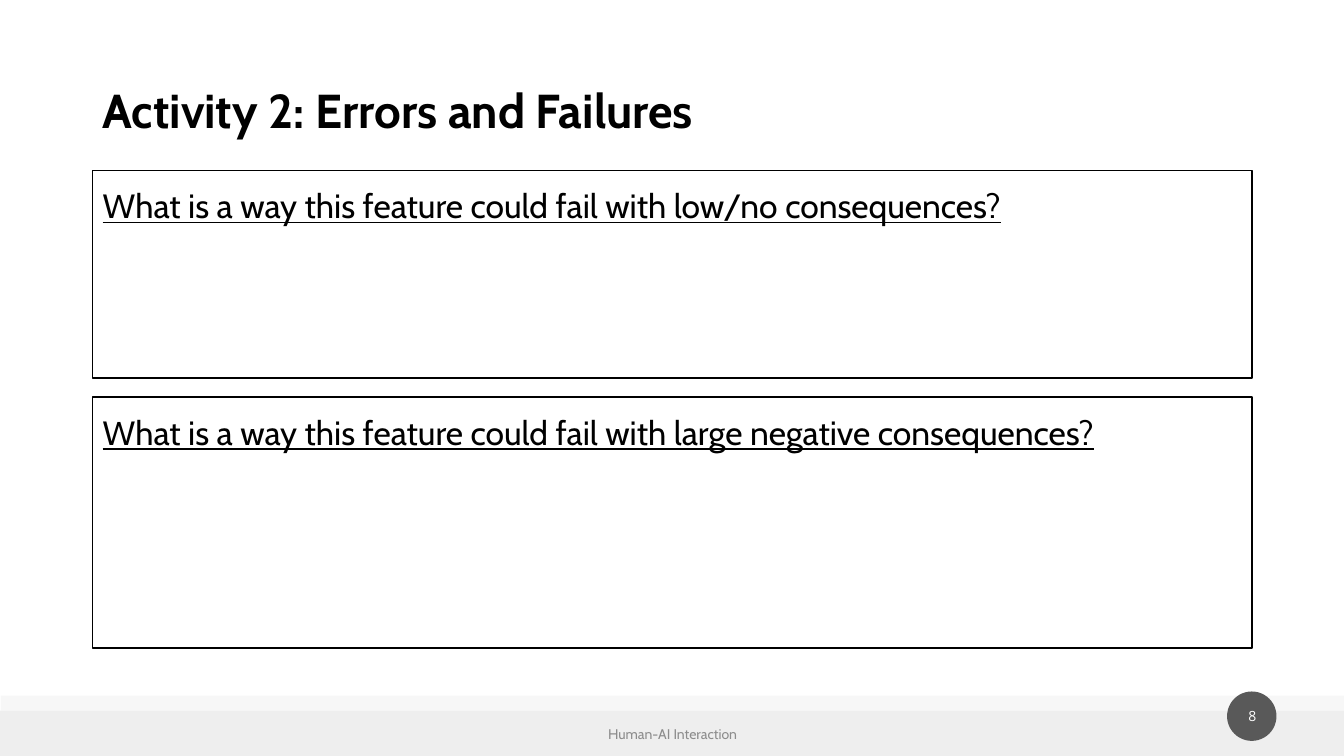
from lxml import etree
from pptx import Presentation
from pptx.dml.color import RGBColor
from pptx.enum.shapes import MSO_SHAPE
from pptx.enum.text import MSO_ANCHOR, PP_ALIGN
from pptx.oxml.ns import qn
from pptx.util import Inches, Pt

BLACK = RGBColor(0x00, 0x00, 0x00)
WHITE = RGBColor(0xFF, 0xFF, 0xFF)
BAND = RGBColor(0xEE, 0xEE, 0xEE)
BADGE = RGBColor(0x59, 0x59, 0x59)
MUTED = RGBColor(0x8C, 0x8C, 0x8C)

prs = Presentation()
prs.slide_width = Inches(13.33)
prs.slide_height = Inches(7.5)
s = prs.slides.add_slide(prs.slide_layouts[5])


def add_filled(kind, x, y, w, h, color):
    sp = s.shapes.add_shape(kind, Inches(x), Inches(y), Inches(w), Inches(h))
    sp.shadow.inherit = False
    sp.fill.solid()
    sp.fill.fore_color.rgb = color
    sp.line.fill.background()
    return sp


def add_text(p, text, font, size, color):
    r = p.add_run()
    r.text = text
    r.font.name = font
    r.font.size = Pt(size)
    r.font.color.rgb = color
    return r


# Footer bands, the upper one translucent
add_filled(MSO_SHAPE.RECTANGLE, 0, 7.05, 13.33, 0.45, BAND)
upper_band = add_filled(MSO_SHAPE.RECTANGLE, 0.01, 6.9, 13.32, 0.15, BAND)
clr = upper_band.fill._xPr.find(qn("a:solidFill")).find(qn("a:srgbClr"))
etree.SubElement(clr, qn("a:alpha")).set("val", "47000")

# Page badge
add_filled(MSO_SHAPE.OVAL, 12.17, 6.86, 0.49, 0.49, BADGE)

# Page number and footer text
for x, y, w, h, text, font, color in [
    (12.12, 6.89, 0.6, 0.43, "8", "Open Sans", WHITE),
    (4.42, 7.08, 4.5, 0.4, "Human-AI Interaction", "Cabin", MUTED),
]:
    tf = s.shapes.add_textbox(Inches(x), Inches(y), Inches(w), Inches(h)).text_frame
    tf.word_wrap = True
    tf.vertical_anchor = MSO_ANCHOR.MIDDLE
    p = tf.paragraphs[0]
    p.alignment = PP_ALIGN.CENTER
    add_text(p, text, font, 10, color)

# Title
title = s.shapes.title
title.left, title.top = Inches(0.92), Inches(0.4)
title.width, title.height = Inches(11.5), Inches(1.45)
tf = title.text_frame
tf.vertical_anchor = MSO_ANCHOR.MIDDLE
p = tf.paragraphs[0]
p.alignment = PP_ALIGN.LEFT
p.line_spacing = 0.9
add_text(p, "Activity 2: Errors and Failures", "Cabin", 34, BLACK).font.bold = True

# Answer boxes
for y, h, question in [
    (1.69, 2.06, "What is a way this feature could fail with low/no consequences?"),
    (3.94, 2.49, "What is a way this feature could fail with large negative consequences?"),
]:
    box = add_filled(MSO_SHAPE.RECTANGLE, 0.92, y, 11.5, h, WHITE)
    box.line.color.rgb = BLACK
    box.line.width = Pt(1)
    tf = box.text_frame
    tf.word_wrap = True
    tf.vertical_anchor = MSO_ANCHOR.TOP
    p = tf.paragraphs[0]
    p.alignment = PP_ALIGN.LEFT
    p.line_spacing = 1.25
    p.space_before = Pt(10)
    add_text(p, question, "Cabin", 24, BLACK).font.underline = True

prs.save("out.pptx")
